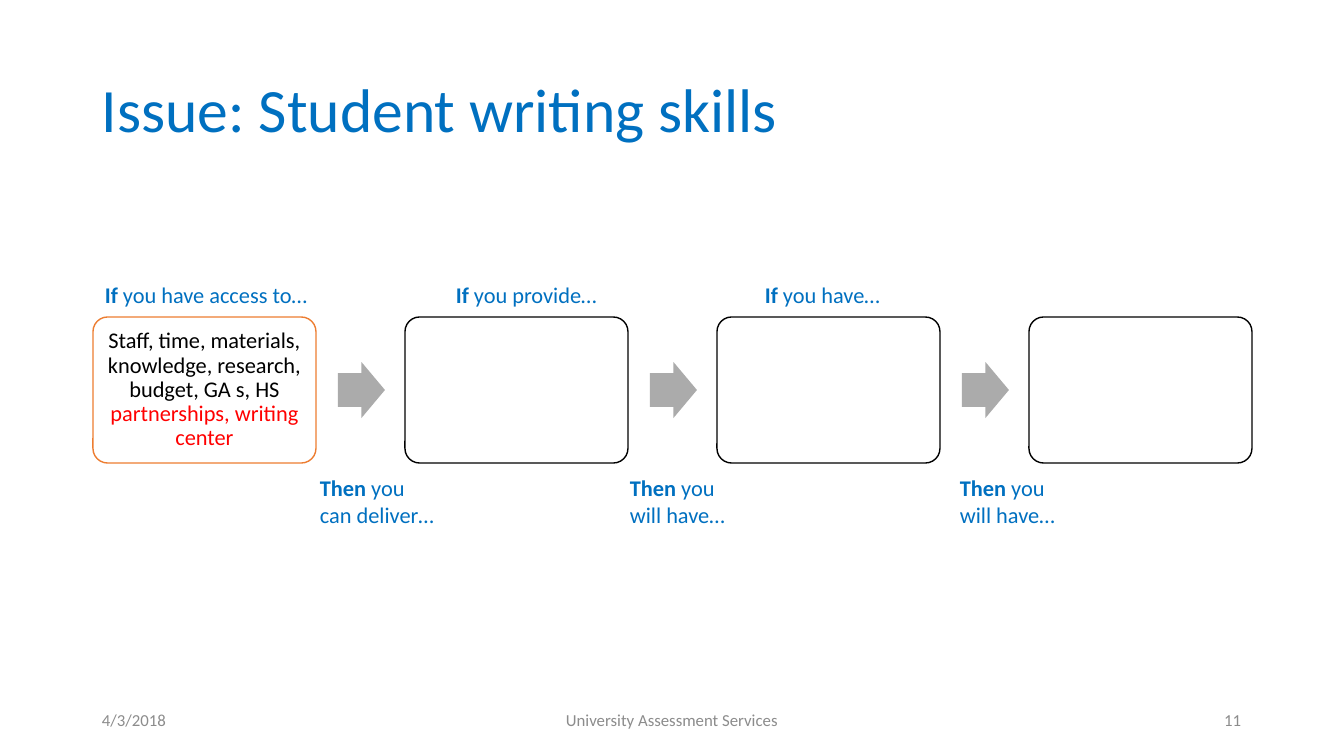
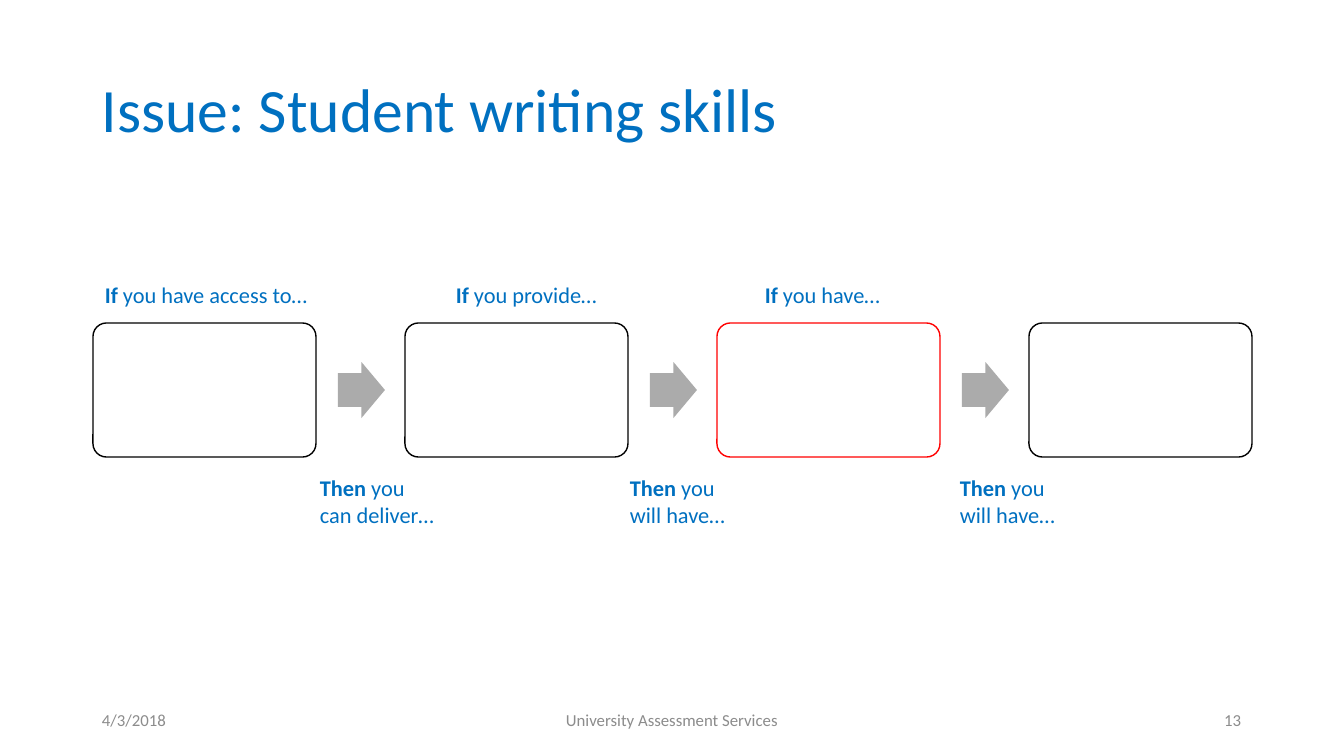
from dataclasses import dataclass

from pptx import Presentation
from pptx import util as u
from pptx.dml import color as clr
from pptx.enum import shapes, text

EMU_PER_PX = 914400 / 100.8


def px(length):
    return u.Emu(round(length * EMU_PER_PX))


def apply(target, values):
    for name, value in values.items():
        setattr(target, name, value)


def rgb(code):
    return clr.RGBColor.from_string(code)


@dataclass(frozen=True)
class Theme:
    font: str = "Calibri"
    accent: str = "0070C0"
    ink: str = "000000"
    paper: str = "FFFFFF"
    arrow: str = "ABABAB"
    footer: str = "8C8C8C"
    orange: str = "ED7D31"
    red: str = "FF0000"
    title_size: int = 44
    body_size: int = 16
    footer_size: int = 12


THEME = Theme()
LEFT, CENTER, RIGHT = text.PP_ALIGN.LEFT, text.PP_ALIGN.CENTER, text.PP_ALIGN.RIGHT
TOP, MIDDLE = text.MSO_ANCHOR.TOP, text.MSO_ANCHOR.MIDDLE

STAGE_COUNT = 4
STAGE_LEFT, STAGE_PITCH, STAGE_WIDTH = 93, 312, 223
ARROW_LEFT, ARROW_WIDTH, ARROW_HEIGHT = 338, 47, 56
FLOW_CENTER = 390

CONDITIONS = [
    (95, 232, " you have access to…"),
    (446, 174, " you provide…"),
    (755, 174, " you have…"),
]
OUTCOMES = [(310, "can deliver…"), (620, "will have…"), (950, "will have…")]


class Deck:
    def __init__(self, theme):
        self.theme = theme
        self.prs = Presentation()
        apply(self.prs, {"slide_width": px(1344), "slide_height": px(756)})
        self.slide = None

    def new_slide(self):
        self.slide = self.prs.slides.add_slide(self.prs.slide_layouts[6])

    def fill_text(self, frame, paragraphs, size, color, align=LEFT, anchor=TOP, spacing=1.0):
        apply(frame, {"word_wrap": True, "vertical_anchor": anchor})
        for index, runs in enumerate(paragraphs):
            paragraph = frame.paragraphs[0] if index == 0 else frame.add_paragraph()
            apply(paragraph, {"alignment": align, "line_spacing": spacing})
            for words, style in runs:
                run = paragraph.add_run()
                run.text = words
                apply(run.font, {"name": self.theme.font, "size": u.Pt(size),
                                 "bold": style.get("bold", False)})
                run.font.color.rgb = rgb(style.get("color", color))

    def label(self, box, paragraphs, size, color, **layout):
        area = self.slide.shapes.add_textbox(*map(px, box))
        self.fill_text(area.text_frame, paragraphs, size, color, **layout)

    def shape(self, preset, box, fill, adjustments, line=None):
        figure = self.slide.shapes.add_shape(preset, *map(px, box))
        figure.shadow.inherit = False
        for index, value in enumerate(adjustments):
            figure.adjustments[index] = value
        figure.fill.solid()
        figure.fill.fore_color.rgb = rgb(fill)
        if line:
            figure.line.color.rgb = rgb(line)
            figure.line.width = u.Pt(1)
        else:
            figure.line.fill.background()
        return figure

    def title(self, words):
        self.label((92, 40, 1159, 146), [[(words, {})]], self.theme.title_size,
                   self.theme.accent, anchor=MIDDLE, spacing=0.9)

    def footer(self, number):
        for left, width, words, align in [
            (92, 302, "4/3/2018", LEFT),
            (445, 454, "University Assessment Services", CENTER),
            (949, 302, number, RIGHT),
        ]:
            self.label((left, 700, width, 40), [[(words, {})]], self.theme.footer_size,
                       self.theme.footer, align=align, anchor=MIDDLE)

    def stage(self, index, height, line, runs):
        box = (STAGE_LEFT + STAGE_PITCH * index, FLOW_CENTER - height // 2,
               STAGE_WIDTH, height)
        stage = self.shape(shapes.MSO_SHAPE.ROUNDED_RECTANGLE, box, self.theme.paper,
                           [0.1], line)
        if runs:
            sides = ("left", "right", "top", "bottom")
            apply(stage.text_frame, {f"margin_{side}": px(7) for side in sides})
            self.fill_text(stage.text_frame, [runs], self.theme.body_size, self.theme.ink,
                           align=CENTER, anchor=MIDDLE, spacing=0.9)

    def arrow(self, index):
        box = (ARROW_LEFT + STAGE_PITCH * index, FLOW_CENTER - ARROW_HEIGHT // 2,
               ARROW_WIDTH, ARROW_HEIGHT)
        self.shape(shapes.MSO_SHAPE.RIGHT_ARROW, box, self.theme.arrow, [0.6, 0.5])

    def prompt(self, box, keyword, rest, *more):
        paragraphs = [[(keyword, {"bold": True}), (rest, {})]]
        paragraphs += [[(words, {})] for words in more]
        self.label(box, paragraphs, self.theme.body_size, self.theme.accent)

    def logic_model(self, number, height, highlight, highlight_color, contents):
        self.new_slide()
        self.title("Issue: Student writing skills")
        for index in range(STAGE_COUNT):
            line = highlight_color if index == highlight else self.theme.ink
            self.stage(index, height, line, contents.get(index))
            if index < STAGE_COUNT - 1:
                self.arrow(index)
        self.footer(number)
        for left, width, condition in CONDITIONS:
            self.prompt((left, 276, width, 37), "If", condition)
        for left, outcome in OUTCOMES:
            self.prompt((left, 469, 203, 65), "Then", " you", outcome)


def main():
    deck = Deck(THEME)
    resources = [
        ("Staff, time, materials, knowledge, research, budget, GA s, HS ", {}),
        ("partnerships, writing center", {"color": THEME.red}),
    ]
    deck.logic_model("11", 146, 0, THEME.orange, {0: resources})
    deck.logic_model("13", 134, 2, THEME.red, {})
    deck.prs.save("out.pptx")


if __name__ == "__main__":
    main()
